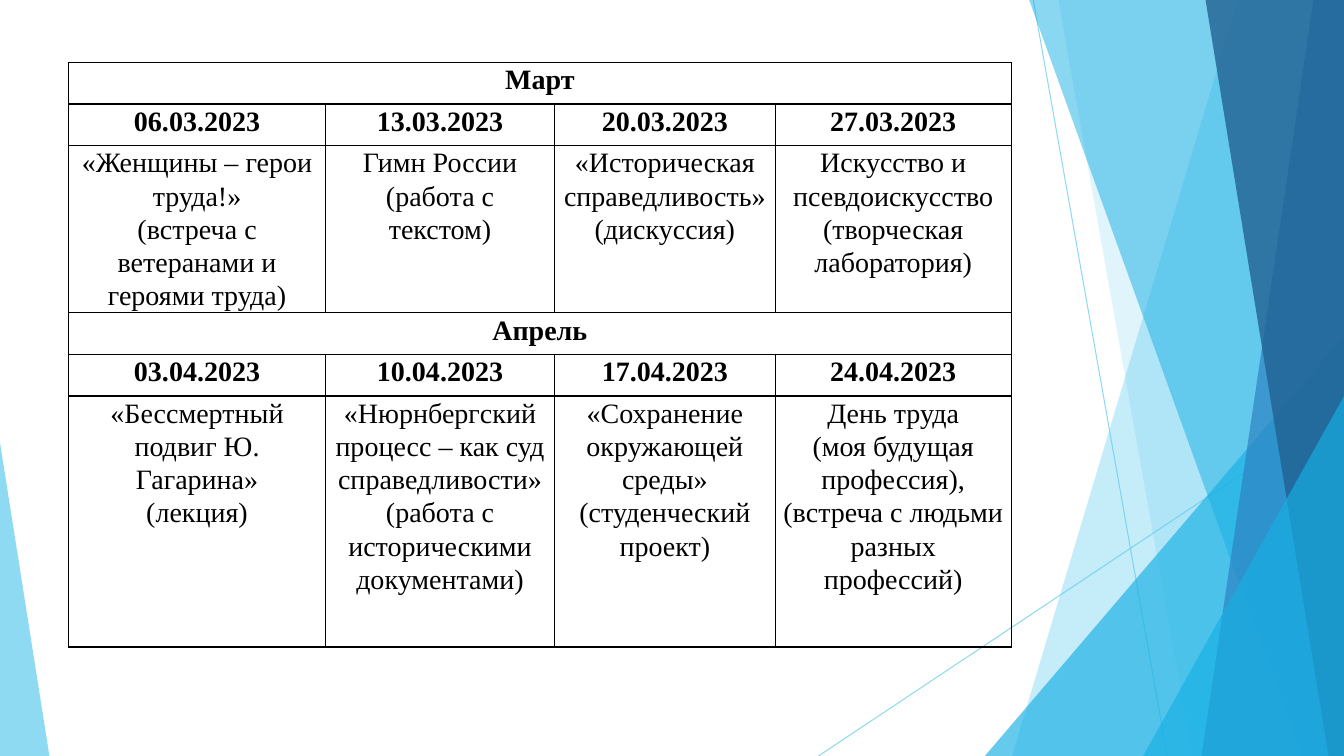
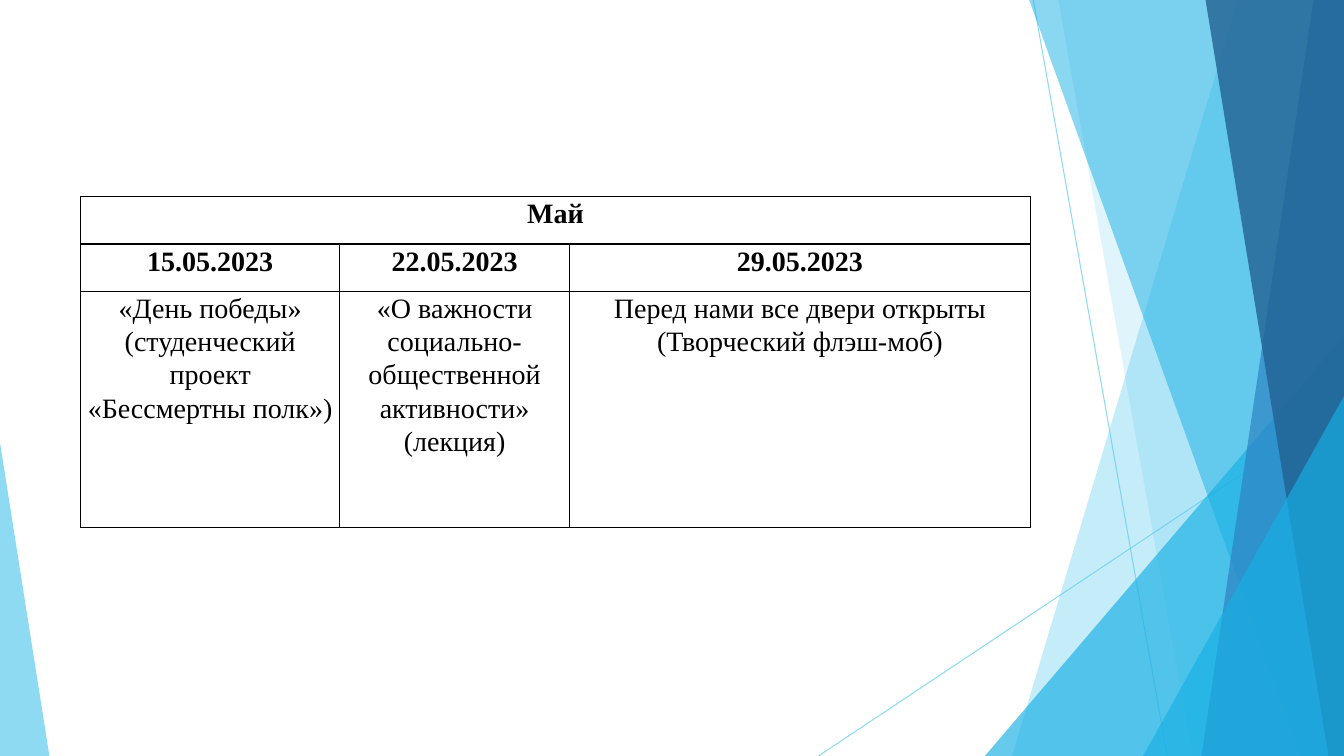
import pptx
import pptx.dml.color
import pptx.enum.shapes
import pptx.enum.text
import pptx.oxml.ns
import pptx.util
from lxml import etree

WIDTH = pptx.util.Inches(13.333)
HEIGHT = pptx.util.Inches(7.5)
FONT = "Times New Roman"
COLORS = {
    "ink": "000000",
    "sky": "5FCBEF",
    "cyan": "17B0E4",
    "blue": "2E83C3",
    "navy": "226292",
}

MARCH = ("Март", [
    ("06.03.2023", ["«Женщины – герои труда!»", "(встреча с ветеранами и героями труда)"]),
    ("13.03.2023", ["Гимн России", "(работа с текстом)"]),
    ("20.03.2023", ["«Историческая справедливость»", "(дискуссия)"]),
    ("27.03.2023", ["Искусство и псевдоискусство", "(творческая лаборатория)"]),
])
APRIL = ("Апрель", [
    ("03.04.2023", ["«Бессмертный подвиг Ю. Гагарина»", "(лекция)"]),
    ("10.04.2023", ["«Нюрнбергский процесс – как суд справедливости»",
                    "(работа с историческими документами)"]),
    ("17.04.2023", ["«Сохранение окружающей среды»", "(студенческий проект)"]),
    ("24.04.2023", ["День труда",
                    "(моя будущая профессия), (встреча с людьми разных профессий)"]),
])
MAY = ("Май", [
    ("15.05.2023", ["«День победы»", "(студенческий проект «Бессмертны полк»)"]),
    ("22.05.2023", ["«О важности социально-общественной активности»", "(лекция)"]),
    ("29.05.2023", ["Перед нами все двери открыты", "(Творческий флэш-моб)"]),
])


def across(percent):
    return pptx.util.Emu(round(WIDTH * percent / 100))


def down(percent):
    return pptx.util.Emu(round(HEIGHT * percent / 100))


def rgb(name):
    return pptx.dml.color.RGBColor.from_string(COLORS[name])


def add_element(parent, tag, **attributes):
    return etree.SubElement(parent, pptx.oxml.ns.qn(tag), **attributes)


def set_opacity(shape, percent):
    for color in shape.element.iter(pptx.oxml.ns.qn("a:srgbClr")):
        add_element(color, "a:alpha", val=str(percent * 1000))


def paint(shape, color, opacity):
    shape.shadow.inherit = False
    shape.fill.solid()
    shape.fill.fore_color.rgb = rgb(color)
    shape.line.fill.background()
    set_opacity(shape, opacity)


def add_ray(slide, start, end):
    ray = slide.shapes.add_connector(
        pptx.enum.shapes.MSO_CONNECTOR.STRAIGHT,
        across(start[0]), down(start[1]), across(end[0]), down(end[1]))
    ray.line.color.rgb = rgb("sky")
    ray.line.width = pptx.util.Pt(0.75)
    set_opacity(ray, 70)
    add_element(ray.element.spPr, "a:effectLst")


def add_band(slide, top_left, bottom_left, color, opacity):
    builder = slide.shapes.build_freeform(across(top_left), 0)
    builder.add_line_segments(
        [(WIDTH, 0), (WIDTH, HEIGHT), (across(bottom_left), HEIGHT)], close=True)
    paint(builder.convert_to_shape(), color, opacity)


def add_corner(slide, left, top, right, apex, color, opacity):
    corner = slide.shapes.add_shape(
        pptx.enum.shapes.MSO_SHAPE.ISOSCELES_TRIANGLE,
        across(left), down(top), across(right - left), down(100 - top))
    corner.adjustments[0] = apex
    paint(corner, color, opacity)


def decorate_layout(layout, slide):
    for placeholder in list(layout.placeholders):
        layout.shapes.element.remove(placeholder.element)
    add_ray(slide, (76.88, 0), (86.85, 100))
    add_ray(slide, (100, 53.73), (60.9, 100))
    add_band(slide, 92.1, 75.3, "sky", 36)
    add_band(slide, 78.75, 88.73, "sky", 20)
    add_corner(slide, 73.28, 44.4, 100, 1, "cyan", 66)
    add_band(slide, 76.58, 96.83, "cyan", 50)
    add_band(slide, 97.73, 89.4, "blue", 70)
    add_band(slide, 89.7, 98.85, "navy", 80)
    add_corner(slide, 85.05, 52.4, 100, 1, "cyan", 66)
    add_corner(slide, 0, 58.53, 3.68, 0, "sky", 70)
    for shape in list(slide.shapes):
        layout.shapes.element.append(shape.element)


def style_cell(cell):
    cell.margin_left = cell.margin_right = pptx.util.Inches(0.07)
    cell.margin_top = cell.margin_bottom = 0
    properties = cell._tc.get_or_add_tcPr()
    for side in ("a:lnL", "a:lnR", "a:lnT", "a:lnB"):
        border = add_element(properties, side, w=str(pptx.util.Pt(1)))
        fill = add_element(border, "a:solidFill")
        add_element(fill, "a:srgbClr", val=COLORS["ink"])
    cell.fill.background()


def write_cell(cell, lines, bold):
    cell.text = "\n".join(lines)
    for paragraph in cell.text_frame.paragraphs:
        paragraph.alignment = pptx.enum.text.PP_ALIGN.CENTER
        paragraph.line_spacing = 1.07
        paragraph.font.name = FONT
        paragraph.font.size = pptx.util.Pt(20)
        paragraph.font.bold = bold
        paragraph.font.color.rgb = rgb("ink")


def add_calendar(slide, months, left, top, columns, rows):
    table = slide.shapes.add_table(
        len(rows), len(columns), across(left), down(top),
        across(sum(columns)), down(sum(rows))).table
    table.first_row = table.horz_banding = False
    for column, width in zip(table.columns, columns):
        column.width = across(width)
    for row, height in zip(table.rows, rows):
        row.height = down(height)
    for cell in table.iter_cells():
        style_cell(cell)
    for index, (month, events) in enumerate(months):
        first = index * 3
        table.cell(first, 0).merge(table.cell(first, len(columns) - 1))
        write_cell(table.cell(first, 0), [month], True)
        for column, (date, lines) in enumerate(events):
            write_cell(table.cell(first + 1, column), [date], True)
            write_cell(table.cell(first + 2, column), lines, False)


def main():
    presentation = pptx.Presentation()
    presentation.slide_width = WIDTH
    presentation.slide_height = HEIGHT
    layout = presentation.slide_layouts[6]
    spring, may = [presentation.slides.add_slide(layout) for _ in range(2)]
    decorate_layout(layout, spring)
    add_calendar(spring, [MARCH, APRIL], 5.1, 8.27,
                 [19.13, 17.03, 16.43, 17.55], [5.5, 5.5, 22.13, 5.5, 5.5, 33.2])
    add_calendar(may, [MAY], 6, 26, [19.28, 17.1, 34.28], [6.27, 6.27, 31.2])
    presentation.save("out.pptx")


if __name__ == "__main__":
    main()
